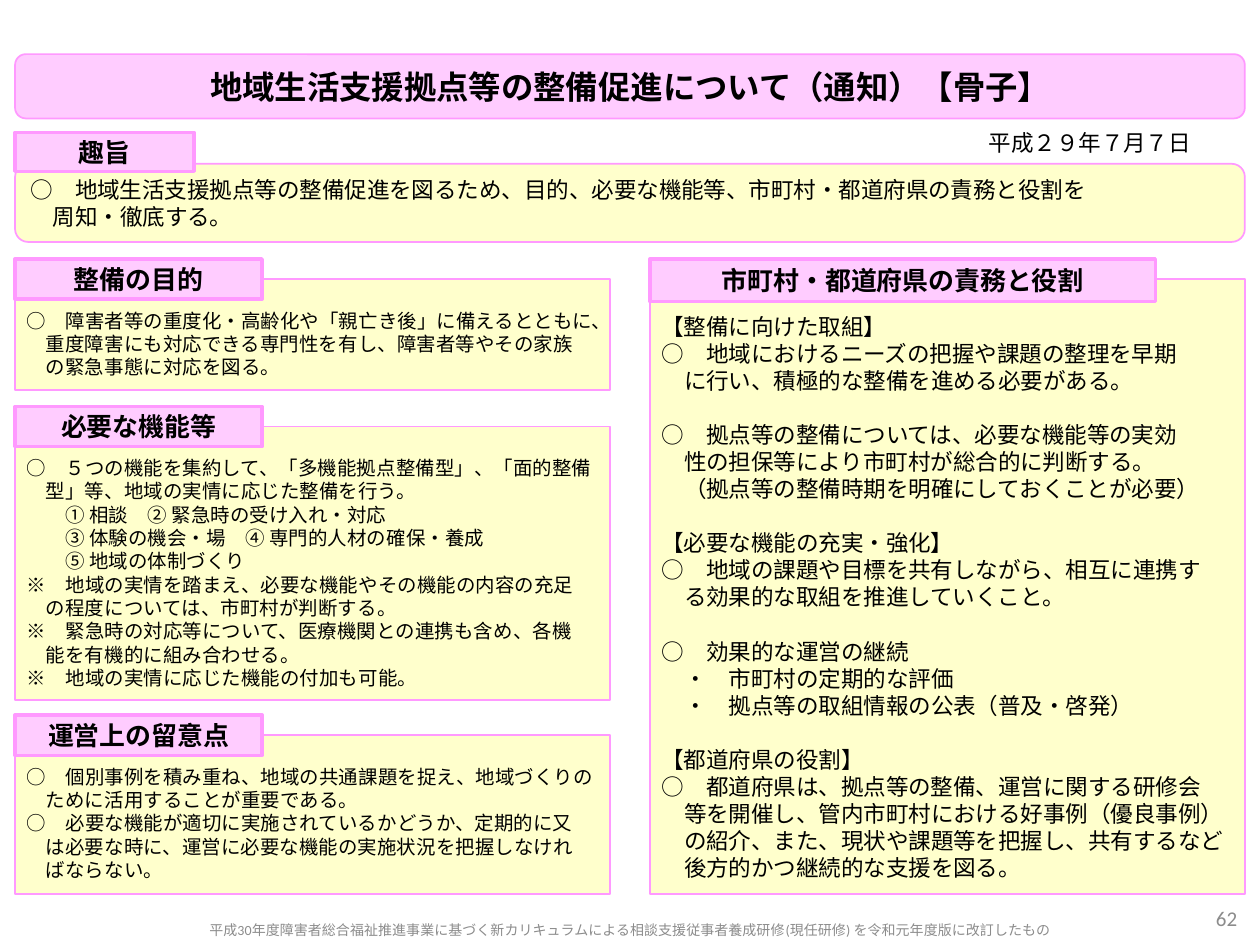
from copy import deepcopy
from typing import NamedTuple

from lxml.etree import SubElement
from pptx import Presentation
from pptx.dml.color import RGBColor
from pptx.enum.shapes import MSO_SHAPE as Shape
from pptx.enum.text import MSO_ANCHOR as Anchor, MSO_AUTO_SIZE as AutoSize, PP_ALIGN as Align
from pptx.oxml.ns import qn
from pptx.util import Inches, Pt

SLIDE_W, SLIDE_H = Inches(10), Inches(7.5)
COL, ROW = SLIDE_W / 100, SLIDE_H / 75  # grid of 100 columns by 75 rows
COLORS = {"pink": "FFCCFF", "border": "FF99FF", "cream": "FFFFCC",
          "ink": "000000", "grey": "8C8C8C"}
JAPANESE, LATIN = "Noto Sans CJK JP", "Calibri"
LINE_HEIGHT = 1.2
MARKERS = "○※・"
LEFT, RIGHT, PANEL_W, FULL_W = 1.2, 51.6, 47.2, 97.6
SMALL, MEDIUM, HEADING = 11.1, 12.9, 14.8


class Box(NamedTuple):
    """Place on the grid, in columns and rows."""
    col: float
    row: float
    cols: float
    rows: float


class Item(NamedTuple):
    """Paragraph; level is its indent in characters, gap the lines before it."""
    text: str
    level: int = 0
    gap: int = 0


class Section(NamedTuple):
    heading: str
    tab: Box
    panel: Box
    size: float
    items: list[Item]


PURPOSE = [Item("○　障害者等の重度化・高齢化や「親亡き後」に備えるとともに、"
                "重度障害にも対応できる専門性を有し、障害者等やその家族\v"
                "の緊急事態に対応を図る。")]
FUNCTIONS = [
    Item("○　５つの機能を集約して、「多機能拠点整備型」、「面的整備\v"
         "型」等、地域の実情に応じた整備を行う。"),
    Item("① 相談　② 緊急時の受け入れ・対応", 2),
    Item("③ 体験の機会・場　④ 専門的人材の確保・養成", 2),
    Item("⑤ 地域の体制づくり", 2),
    Item("※　地域の実情を踏まえ、必要な機能やその機能の内容の充足\v"
         "の程度については、市町村が判断する。"),
    Item("※　緊急時の対応等について、医療機関との連携も含め、各機\v"
         "能を有機的に組み合わせる。"),
    Item("※　地域の実情に応じた機能の付加も可能。"),
]
OPERATION = [
    Item("○　個別事例を積み重ね、地域の共通課題を捉え、地域づくりの\v"
         "ために活用することが重要である。"),
    Item("○　必要な機能が適切に実施されているかどうか、定期的に又\v"
         "は必要な時に、運営に必要な機能の実施状況を把握しなけれ\v"
         "ばならない。"),
]
DUTIES = [
    Item("【整備に向けた取組】"),
    Item("○　地域におけるニーズの把握や課題の整理を早期\v"
         "に行い、積極的な整備を進める必要がある。"),
    Item("○　拠点等の整備については、必要な機能等の実効\v"
         "性の担保等により市町村が総合的に判断する。\v"
         "（拠点等の整備時期を明確にしておくことが必要）", gap=1),
    Item("【必要な機能の充実・強化】", gap=1),
    Item("○　地域の課題や目標を共有しながら、相互に連携す\v"
         "る効果的な取組を推進していくこと。"),
    Item("○　効果的な運営の継続", gap=1),
    Item("・　市町村の定期的な評価", 1),
    Item("・　拠点等の取組情報の公表（普及・啓発）", 1),
    Item("【都道府県の役割】", gap=1),
    Item("○　都道府県は、拠点等の整備、運営に関する研修会\v"
         "等を開催し、管内市町村における好事例（優良事例）\v"
         "の紹介、また、現状や課題等を把握し、共有するなど\v"
         "後方的かつ継続的な支援を図る。"),
]
SUMMARY = [Item("○　地域生活支援拠点等の整備促進を図るため、目的、必要な機能等、"
                "市町村・都道府県の責務と役割を\v周知・徹底する。")]
SECTIONS = [
    Section("整備の目的", Box(LEFT, 20.55, 19.6, 3.2),
            Box(LEFT, 22.15, PANEL_W, 8.8), SMALL, PURPOSE),
    Section("必要な機能等", Box(LEFT, 32.25, 19.6, 3.2),
            Box(LEFT, 33.85, PANEL_W, 21.7), SMALL, FUNCTIONS),
    Section("運営上の留意点", Box(LEFT, 56.75, 19.6, 3.2),
            Box(LEFT, 58.35, PANEL_W, 12.6), SMALL, OPERATION),
    Section("市町村・都道府県の責務と役割", Box(RIGHT, 20.55, 40.1, 3.4),
            Box(RIGHT, 22.15, PANEL_W, 48.8), MEDIUM, DUTIES),
]


def grid(box: Box) -> tuple[int, int, int, int]:
    return (round(box.col * COL), round(box.row * ROW),
            round(box.cols * COL), round(box.rows * ROW))


def rgb(name: str) -> RGBColor:
    return RGBColor.from_string(COLORS[name])


def write(shape, items: list[Item], *, size: float, align=Align.LEFT, anchor=Anchor.MIDDLE,
          bold: bool = False, color: str = "ink", latin: str = JAPANESE,
          lines_above: int = 0) -> None:
    """Fill a shape with paragraphs, hanging those that open with a marker."""
    frame = shape.text_frame
    frame.word_wrap, frame.auto_size, frame.vertical_anchor = True, AutoSize.NONE, anchor
    frame.margin_left = frame.margin_right = Inches(0.09)
    line = Pt(size * LINE_HEIGHT)
    frame.margin_top = Inches(0.05) + lines_above * line
    frame.margin_bottom = Inches(0.05)
    for index, item in enumerate(items):
        paragraph = frame.add_paragraph() if index else frame.paragraphs[0]
        paragraph.text = item.text
        paragraph.alignment, paragraph.line_spacing = align, line
        paragraph.space_before = item.gap * line
        hang = int(item.text[0] in MARKERS)
        properties = paragraph._p.get_or_add_pPr()
        properties.set("marL", str(Pt(size) * (item.level + hang)))
        properties.set("indent", str(-Pt(size) * hang))
        SubElement(properties, qn("a:buNone"))
        for run in paragraph.runs:
            font = run.font
            font.size, font.bold, font.name = Pt(size), bold, latin
            font.color.rgb = rgb(color)
            SubElement(run._r.rPr, qn("a:ea"), typeface=JAPANESE)
        for line_break in paragraph._p.findall(qn("a:br")):
            line_break.append(deepcopy(paragraph.runs[0]._r.rPr))


def paint(shape, fill: str, border: float) -> None:
    shape.fill.solid()
    shape.fill.fore_color.rgb = rgb(fill)
    shape.line.color.rgb = rgb("border")
    shape.line.width = Pt(border)


def place(slide, placeholder, box: Box):
    """Move a placeholder onto the grid, in front of what is drawn so far."""
    (placeholder.left, placeholder.top,
     placeholder.width, placeholder.height) = grid(box)
    slide.shapes._spTree.append(placeholder._element)
    return placeholder


def add_block(slide, kind, box: Box, fill: str, border: float = 1):
    block = slide.shapes.add_shape(kind, *grid(box))
    block.shadow.inherit = False
    paint(block, fill, border)
    return block


def add_tab(slide, heading: str, box: Box) -> None:
    tab = add_block(slide, Shape.RECTANGLE, box, "pink", 2)
    write(tab, [Item(heading)], size=HEADING, align=Align.CENTER, bold=True)


def add_label(slide, text: str, box: Box, **text_format) -> None:
    write(slide.shapes.add_textbox(*grid(box)), [Item(text)], latin=LATIN, **text_format)


def main() -> None:
    deck = Presentation()
    deck.slide_width, deck.slide_height = SLIDE_W, SLIDE_H
    slide = deck.slides.add_slide(deck.slide_layouts[1])
    title, duties = slide.shapes.title, slide.placeholders[1]

    # Title on its rounded band, and date
    band = Box(LEFT, 4.3, FULL_W, 5.1)
    add_block(slide, Shape.ROUNDED_RECTANGLE, band, "pink")
    write(place(slide, title, band), [Item("地域生活支援拠点等の整備促進について（通知）【骨子】")],
          size=18.5, align=Align.CENTER, bold=True)
    add_label(slide, "平成２９年７月７日", Box(74.4, 9.55, 24.2, 3.5),
              size=MEDIUM, align=Align.CENTER)

    # Summary across the full width
    summary = add_block(slide, Shape.ROUNDED_RECTANGLE, Box(LEFT, 13, FULL_W, 6.2), "cream")
    write(summary, SUMMARY, size=MEDIUM)
    add_tab(slide, "趣旨", Box(LEFT, 10.5, 14.2, 3.1))

    # Sections: the duties list sits in the body placeholder
    for section in SECTIONS:
        if section.items is DUTIES:
            panel = place(slide, duties, section.panel)
            paint(panel, "cream", 1)
        else:
            panel = add_block(slide, Shape.RECTANGLE, section.panel, "cream")
        write(panel, section.items, size=section.size, anchor=Anchor.TOP, lines_above=1)
        add_tab(slide, section.heading, section.tab)

    # Page number and footer
    add_label(slide, "62", Box(76.6, 70.9, 22.5, 4), size=12, align=Align.RIGHT, color="grey")
    add_label(slide, "平成30年度障害者総合福祉推進事業に基づく新カリキュラムによる"
              "相談支援従事者養成研修(現任研修) を令和元年度版に改訂したもの",
              Box(0, 72.9, 100, 1.8), size=8, align=Align.CENTER, color="grey")

    deck.save("out.pptx")


if __name__ == "__main__":
    main()
